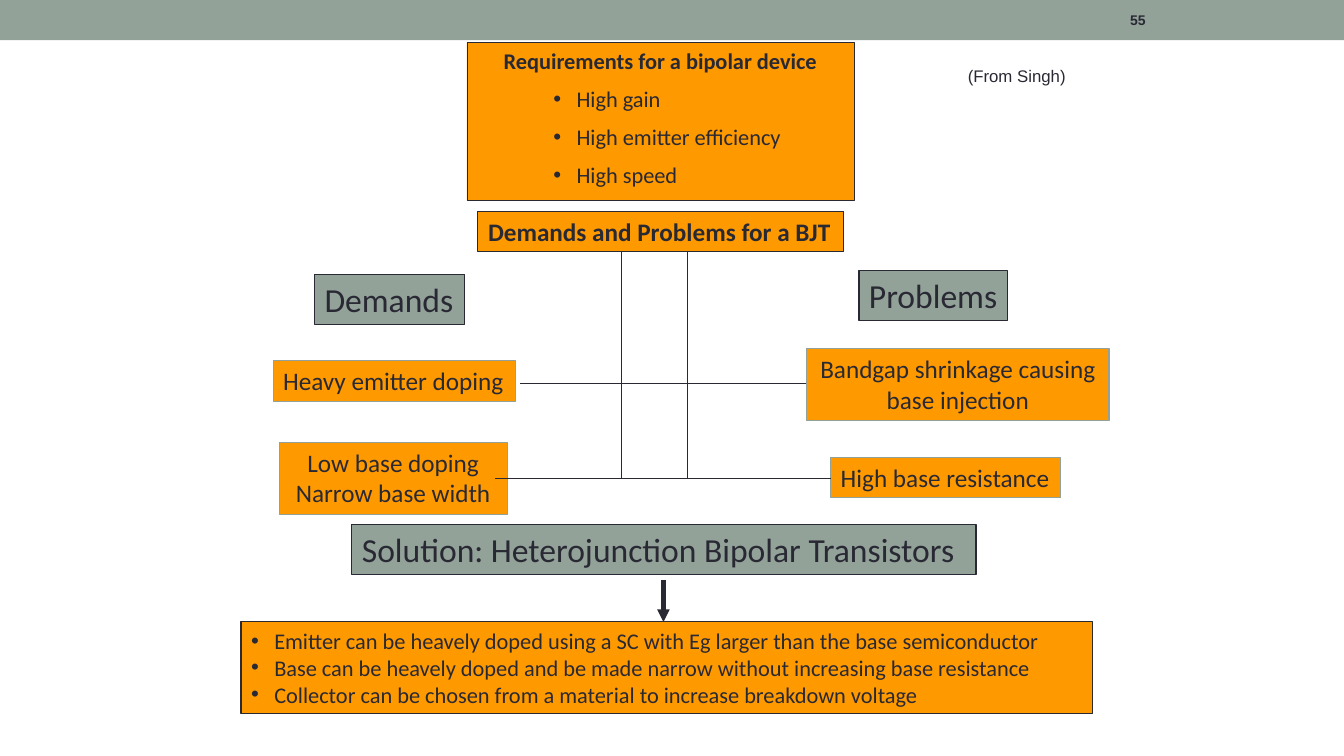
from lxml import etree
from pptx import Presentation
from pptx.dml.color import RGBColor
from pptx.enum.shapes import MSO_CONNECTOR, MSO_SHAPE
from pptx.enum.text import MSO_ANCHOR, MSO_AUTO_SIZE, PP_ALIGN
from pptx.oxml.ns import qn
from pptx.util import Inches, Pt

RECT, LINE = MSO_SHAPE.RECTANGLE, MSO_CONNECTOR.STRAIGHT
TOP, MID = MSO_ANCHOR.TOP, MSO_ANCHOR.MIDDLE
LEFT, MID_TEXT = PP_ALIGN.LEFT, PP_ALIGN.CENTER
FIXED = MSO_AUTO_SIZE.NONE
INK, SAGE, ORANGE = "292934", "93A299", "FF9900"


def rgb(code):
    return RGBColor.from_string(code)


class Chart:
    """Draws the flow chart's elements on one slide in one style."""

    font = "Calibri"

    def __init__(self, slide):
        self.slide = slide
        self.shapes = slide.shapes

    def text(self, shape, lines, size, bold=False, align=LEFT, wrap=True,
             anchor=TOP, font=None):
        frame = shape.text_frame
        frame.text = "\n".join(lines)
        frame.auto_size, frame.word_wrap = FIXED, wrap
        frame.vertical_anchor = anchor
        frame.margin_left = frame.margin_right = Inches(0.1)
        frame.margin_top = frame.margin_bottom = Inches(0.05)
        for par in frame.paragraphs:
            par.alignment, par.space_before = align, Pt(0)
            par.font.name, par.font.size = font or self.font, Pt(size)
            par.font.bold, par.font.color.rgb = bold, rgb(INK)
        return frame.paragraphs

    def paint(self, shape, fill, edge, width=0.75):
        shape.fill.solid()
        shape.fill.fore_color.rgb = rgb(fill)
        if edge:
            shape.line.color.rgb = rgb(edge)
            shape.line.width = Pt(width)
        else:
            shape.line.fill.background()

    def box(self, at, fill, edge=None, width=0.75):
        shape = self.shapes.add_shape(RECT, *map(Inches, at))
        shape.shadow.inherit = False
        self.paint(shape, fill, edge, width)
        return shape

    def holder(self, index, at, fill, edge):
        """Move and paint one of the layout's placeholders."""
        shape = self.slide.placeholders[index]
        shape.left, shape.top, shape.width, shape.height = map(Inches, at)
        self.paint(shape, fill, edge)
        return shape

    def note(self, at, line, size, **style):
        shape = self.shapes.add_textbox(*map(Inches, at))
        self.text(shape, [line], size, font="Arial", **style)

    def bullet(self, par, left, hang=0.23):
        props = par._p.get_or_add_pPr()
        props.set("marL", str(Inches(left)))
        props.set("indent", str(-Inches(hang)))
        etree.SubElement(props, qn("a:buFont"), typeface="Arial")
        etree.SubElement(props, qn("a:buChar"), char="•")

    def line(self, start, end, width=0.75, arrow=False):
        link = self.shapes.add_connector(LINE, *map(Inches, start + end))
        link.line.color.rgb = rgb(INK)
        link.line.width = Pt(width)
        if arrow:
            etree.SubElement(link.line._get_or_add_ln(), qn("a:tailEnd"),
                             type="triangle")
        etree.SubElement(link._element.spPr, qn("a:effectLst"))


def main():
    deck = Presentation()
    deck.slide_width, deck.slide_height = Inches(13.33), Inches(7.5)
    chart = Chart(deck.slides.add_slide(deck.slide_layouts[1]))

    chart.box((0, 0, 13.33, 0.4), SAGE)
    chart.note((11.11, 0.02, 1.56, 0.36), "55", 10, bold=True, anchor=MID)
    chart.note((9.5, 0.6, 1.18, 0.3), "(From Singh)", 12, wrap=False)

    needs = chart.box((4.63, 0.42, 3.84, 1.57), ORANGE, INK, 0.25)
    head, *goals = chart.text(needs, [
        "Requirements for a bipolar device",
        "High gain", "High emitter efficiency", "High speed"], 16)
    head.alignment, head.font.bold = MID_TEXT, True
    for goal in goals:
        goal.space_before = Pt(8)
        chart.bullet(goal, 0.99)

    title = chart.holder(0, (4.74, 2.1, 3.63, 0.4), ORANGE, INK)
    chart.text(title, ["Demands and Problems for a BJT"], 18, bold=True)

    for at, label, wrap in (
            ((3.12, 2.72, 1.49, 0.5), "Demands", False),
            ((8.52, 2.68, 1.47, 0.5), "Problems", False),
            ((3.49, 5.2, 6.19, 0.5),
             "Solution: Heterojunction Bipolar Transistors", True)):
        chart.text(chart.box(at, SAGE, INK), [label], 24, wrap=wrap)

    for at, lines, wrap in (
            ((2.71, 3.58, 2.4, 0.4), ["Heavy emitter doping"], False),
            ((8, 3.46, 3, 0.71),
             ["Bandgap shrinkage causing base injection"], True),
            ((2.77, 4.39, 2.26, 0.71),
             ["Low base doping", "Narrow base width"], True),
            ((8.24, 4.54, 2.28, 0.4), ["High base resistance"], False)):
        chart.text(chart.box(at, ORANGE, SAGE), lines, 18, wrap=wrap,
                   align=MID_TEXT if wrap else LEFT)

    for left, right, y in ((5.16, 7.99, 3.8), (4.91, 8.24, 4.75)):
        chart.line((left, y), (right, y))
    for x in (6.16, 6.82):
        chart.line((x, 2.5), (x, 4.75))
    chart.line((6.58, 5.75), (6.58, 6.17), 3, arrow=True)

    gains = chart.holder(1, (2.39, 6.17, 8.45, 0.91), ORANGE, INK)
    for gain in chart.text(gains, [
            "Emitter can be heavely doped using a SC with Eg larger than "
            "the base semiconductor",
            "Base can be heavely doped and be made narrow without "
            "increasing base resistance",
            "Collector can be chosen from a material to increase "
            "breakdown voltage"], 16):
        chart.bullet(gain, 0.23)

    deck.save("out.pptx")


if __name__ == "__main__":
    main()
